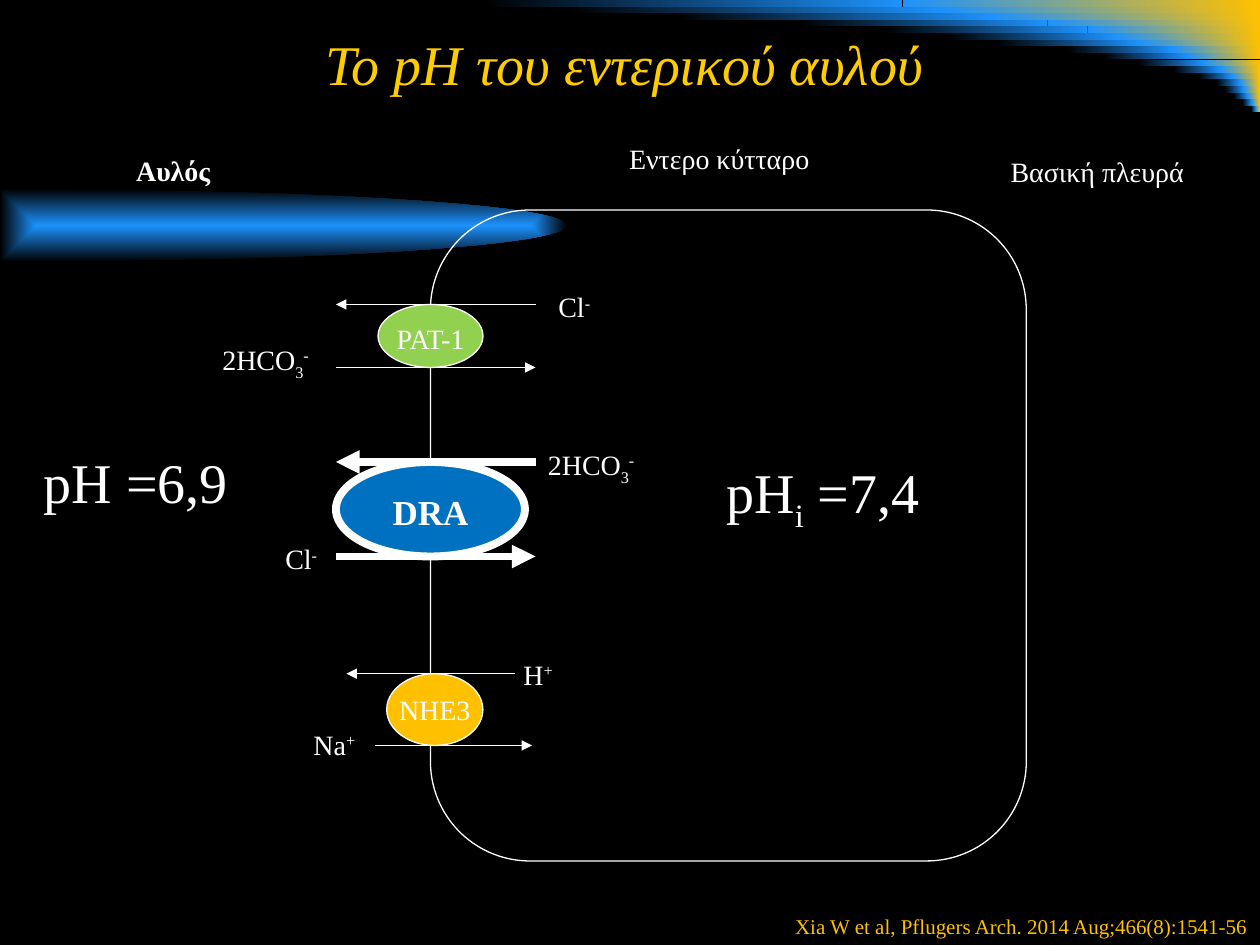
from dataclasses import dataclass
from math import cos, pi, sin

from lxml import etree
from pptx import Presentation
from pptx.dml.color import RGBColor
from pptx.enum.shapes import MSO_CONNECTOR, MSO_SHAPE
from pptx.enum.text import MSO_ANCHOR, MSO_AUTO_SIZE, PP_ALIGN
from pptx.oxml.ns import qn
from pptx.util import Pt

LEFT, CENTER, RIGHT = PP_ALIGN.LEFT, PP_ALIGN.CENTER, PP_ALIGN.RIGHT
TOP, MIDDLE = MSO_ANCHOR.TOP, MSO_ANCHOR.MIDDLE
RECTANGLE, OVAL = MSO_SHAPE.RECTANGLE, MSO_SHAPE.OVAL
ROUNDED, STRAIGHT = MSO_SHAPE.ROUNDED_RECTANGLE, MSO_CONNECTOR.STRAIGHT
NO_FIT = MSO_AUTO_SIZE.NONE
TITLE_ONLY = 5
WIDTH, HEIGHT = 720, 540


@dataclass(frozen=True)
class Theme:
    font: str = "Times New Roman"
    background: str = "000000"
    text: str = "FFFFFF"
    title: str = "FFCC00"
    gold: str = "FFC000"
    glow: str = "1D92FD"
    blue: str = "0070C0"
    green: str = "92D050"
    large: int = 32
    medium: int = 20
    body: int = 16
    small: int = 12
    thin: float = 0.75
    thick: float = 4.5


class SlideBuilder:
    def __init__(self, slide, theme):
        self.slide, self.theme = slide, theme
        background = slide.background.fill
        background.solid()
        background.fore_color.rgb = RGBColor.from_string(theme.background)

    def fill_text(self, frame, parts, size, color=None, align=LEFT, anchor=TOP,
                  wrap=True, bold=False, italic=False):
        """Parts are plain text or (text, baseline percent) pairs."""
        frame.word_wrap, frame.auto_size = wrap, NO_FIT
        frame.vertical_anchor = anchor
        paragraph = frame.paragraphs[0]
        paragraph.alignment = align
        for part in [parts] if isinstance(parts, str) else parts:
            text, baseline = (part, 0) if isinstance(part, str) else part
            run = paragraph.add_run()
            run.text = text
            run.font.name, run.font.size = self.theme.font, Pt(size)
            run.font.bold, run.font.italic = bold, italic
            run.font.color.rgb = RGBColor.from_string(color or self.theme.text)
            if baseline:
                run._r.get_or_add_rPr().set("baseline", str(baseline * 1000))

    def title(self, text, box):
        shape = self.slide.shapes.title
        shape.left, shape.top, shape.width, shape.height = map(Pt, box)
        self.fill_text(shape.text_frame, text, self.theme.large, self.theme.title,
                       CENTER, MIDDLE, italic=True)

    def text(self, parts, box, size=None, **style):
        shape = self.slide.shapes.add_textbox(*map(Pt, box))
        self.fill_text(shape.text_frame, parts, size or self.theme.body, **style)

    def outlined(self, kind, box, fill=None, weight=None):
        shape = self.slide.shapes.add_shape(kind, *map(Pt, box))
        shape.shadow.inherit = False
        if fill:
            shape.fill.solid()
            shape.fill.fore_color.rgb = RGBColor.from_string(fill)
        else:
            shape.fill.background()
        shape.line.color.rgb = RGBColor.from_string(self.theme.text)
        shape.line.width = Pt(weight or self.theme.thin)
        return shape

    def paint_gradient(self, shape, start, end):
        shape.shadow.inherit = False
        shape.line.fill.background()
        shape.fill.gradient()
        shape.fill.gradient_angle = 0
        for stop, color in zip(shape.fill.gradient_stops, (start, end)):
            stop.color.rgb = RGBColor.from_string(color)

    def stripe(self, box, start, end):
        shape = self.slide.shapes.add_shape(RECTANGLE, *map(Pt, box))
        self.paint_gradient(shape, start, end)

    def beam(self, length, middle, radius, steps=60):
        """Half ellipse growing from the left edge, glowing at its centre."""
        angles = [pi * step / steps for step in range(steps + 1)]
        points = [(Pt(length * sin(a)), Pt(middle - radius * cos(a))) for a in angles]
        builder = self.slide.shapes.build_freeform(*points[0])
        builder.add_line_segments(points[1:] + [(0, Pt(middle))], close=True)
        shape = builder.convert_to_shape()
        self.paint_gradient(shape, self.theme.glow, self.theme.background)
        linear = shape._element.spPr.find(".//" + qn("a:lin"))
        gradient = linear.getparent()
        gradient.remove(linear)
        radial = etree.SubElement(gradient, qn("a:path"), path="shape")
        etree.SubElement(radial, qn("a:fillToRect"),
                         dict.fromkeys("ltrb", "50000"))

    def arrow(self, start, end, y, weight=None):
        line = self.slide.shapes.add_connector(STRAIGHT, Pt(start), Pt(y), Pt(end), Pt(y))
        line.line.color.rgb = RGBColor.from_string(self.theme.text)
        line.line.width = Pt(weight or self.theme.thin)
        etree.SubElement(line.line._get_or_add_ln(), qn("a:tailEnd"), type="triangle")
        etree.SubElement(line._element.spPr, qn("a:effectLst"))


def main():
    presentation = Presentation()
    presentation.slide_width, presentation.slide_height = Pt(WIDTH), Pt(HEIGHT)
    theme = Theme()
    slide = presentation.slides.add_slide(presentation.slide_layouts[TITLE_ONLY])
    builder = SlideBuilder(slide, theme)

    # Corner fan: each stripe fades from black to blue, then to gold
    stripe_starts = [276, 326, 386, 456, 505.5, 541, 570, 610.5, 630, 650,
                     670.5, 685, 695, 700, 705, 710, 715]
    stripe_height, gold_share = 3.78, 0.46
    for row, start in enumerate(stripe_starts):
        turn = WIDTH - (WIDTH - start) * gold_share
        top = row * stripe_height
        builder.stripe((turn, top, WIDTH - turn, stripe_height), theme.glow, theme.gold)
        builder.stripe((start, top, turn - start, stripe_height),
                       theme.background, theme.glow)
    builder.beam(324, 128.8, 20.8)

    # Title and compartment names
    builder.title("Το pH του εντερικού αυλού", (24, 0, 666, 72))
    builder.text("Βασική πλευρά", (558, 85, 138, 32), align=CENTER)
    builder.text("Εντερο κύτταρο", (342, 77.5, 138, 27), align=CENTER)
    builder.text("Αυλός", (42, 84, 114, 32), align=CENTER, bold=True)

    # Cell
    cell = builder.outlined(ROUNDED, (246, 120, 340.5, 372))
    cell.adjustments[0] = 0.167

    # Transporters
    sodium = builder.outlined(OVAL, (221, 385, 55, 41), theme.gold)
    builder.fill_text(sodium.text_frame, "NHE3", theme.body, align=CENTER,
                      anchor=MIDDLE, wrap=False)
    builder.outlined(OVAL, (192, 264, 108, 54), theme.blue, theme.thick)
    builder.text("DRA", (216, 276, 60, 32), theme.medium, align=CENTER,
                 anchor=MIDDLE, bold=True)
    builder.outlined(OVAL, (216, 174, 60, 36), theme.green)
    builder.text("PAT-1", (216, 180, 60, 27), align=CENTER, anchor=MIDDLE)

    # Ion flows: start, end, height, weight
    for flow in [(294.5, 198, 385, theme.thin), (214.5, 304, 426, theme.thin),
                 (306, 192, 264, theme.thick), (192, 306, 318, theme.thick),
                 (306, 192, 174, theme.thin), (192, 306, 210, theme.thin)]:
        builder.arrow(*flow)

    # Ion labels: parts, left, top, width
    chloride = ["Cl", ("-", 30)]
    bicarbonate = ["2HCO", ("3", -30), ("-", 30)]
    for parts, left, top, width in [
        (["Η", ("+", 30)], 292, 372, 32),
        (["Na", ("+", 30)], 172, 412, 40),
        (chloride, 156, 306, 33),
        (bicarbonate, 306, 252, 65.5),
        (chloride, 312, 162, 33),
        (bicarbonate, 120, 192, 65.5),
    ]:
        builder.text(parts, (left, top, width, 27), wrap=False)

    # pH values and reference
    builder.text("pH =6,9", (18, 252, 120, 46), theme.large)
    builder.text(["pH", ("i", -25), " =7,4"], (408, 258, 144, 46), theme.large)
    builder.text("Xia W et al, Pflugers Arch. 2014 Aug;466(8):1541-56",
                 (360, 518.4, 360, 21.6), theme.small, color=theme.gold, align=RIGHT)

    presentation.save("out.pptx")


if __name__ == "__main__":
    main()
